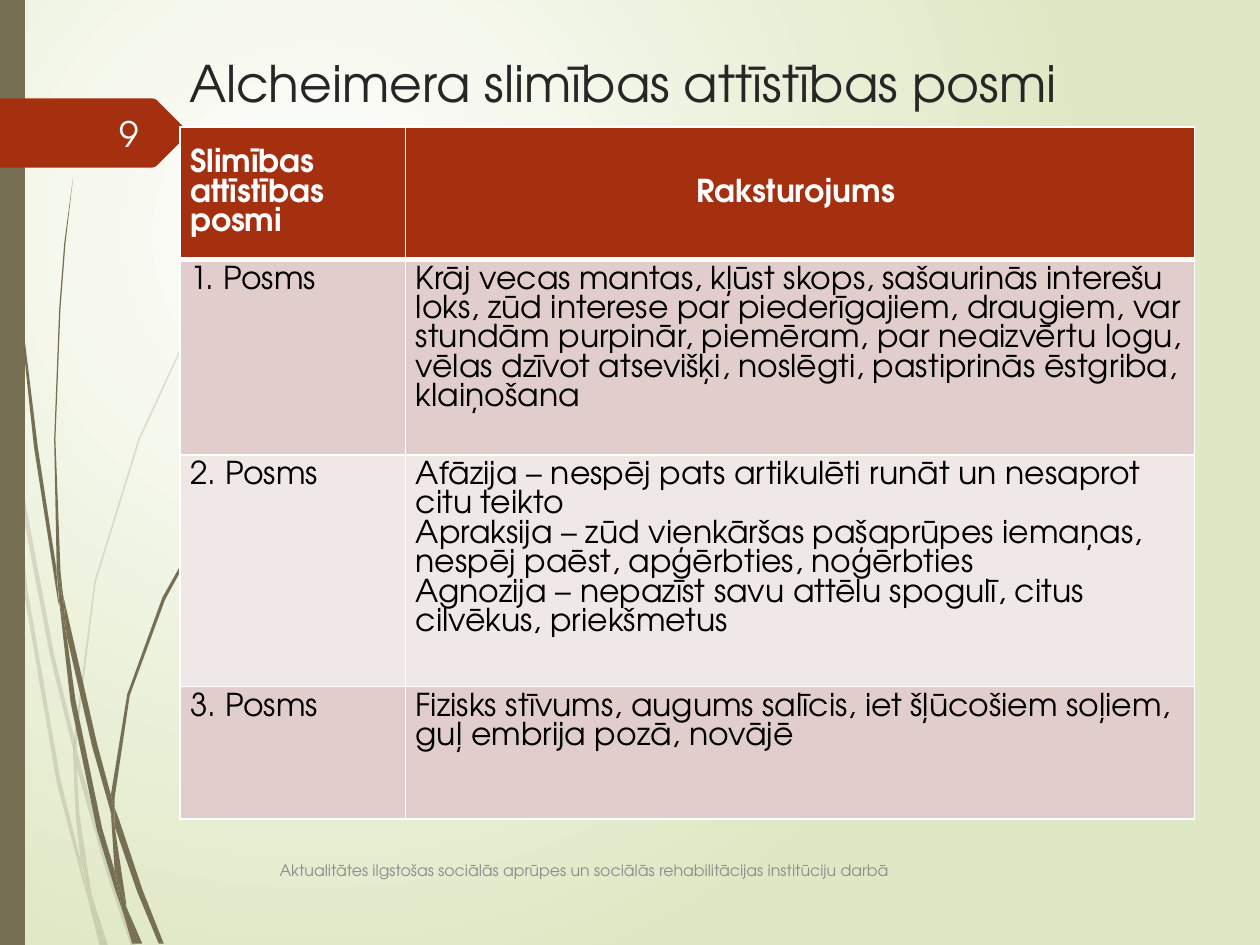
from dataclasses import dataclass

import pptx
import pptx.dml.color
import pptx.enum.text
import pptx.oxml
import pptx.util

PX = 9144  # EMU in one px, 100 px to the inch
NS = 'xmlns:a="http://schemas.openxmlformats.org/drawingml/2006/main"'
ALIGN = pptx.enum.text.PP_ALIGN
ANCHOR = pptx.enum.text.MSO_ANCHOR


@dataclass(frozen=True)
class Theme:
    font: str = "TeX Gyre Adventor"
    earth: str = "766F54"
    rust: str = "A53010"
    white: str = "FFFFFF"
    page: str = "FEFFFF"
    leaf: str = "DFE8C4"
    dark: str = "262626"
    black: str = "000000"
    grey: str = "8C8C8C"
    bands: tuple = ("E1CDCC", "F0E8E7")
    head: float = 28.8
    body: float = 18
    num: float = 20
    foot: float = 9
    pitch: float = 16.8


# Outlines of the grass, as x, y corners
PALE = [
    [(8, 350), (6, 322), (0, 282), (0, 299), (7, 344)],
    [(40, 522), (59, 599), (59, 586), (43, 520), (10, 345), (12, 376)],
    [(64, 607), (61, 596), (61, 610), (85, 694), (104, 751), (108, 751),
     (88, 692)],
    [(83, 751), (86, 751), (73, 711)],
    [(64, 683), (48, 619), (22, 469), (12, 376), (8, 350), (19, 470),
     (45, 621), (64, 693), (70, 714), (69, 707)],
    [(58, 599), (60, 646), (64, 683), (67, 692), (73, 711), (72, 706),
     (63, 646), (61, 610), (61, 608)],
    [(61, 584), (76, 462), (111, 349), (159, 245), (187, 198), (201, 175),
     (217, 154), (217, 153), (201, 175), (186, 197), (158, 244), (110, 348),
     (75, 461), (59, 584), (59, 586), (61, 596)],
    [(70, 714), (79, 751), (82, 751)],
    [(61, 608), (61, 610), (61, 596), (59, 586), (58, 599)],
    [(67, 692), (65, 683), (69, 707), (70, 714), (82, 751), (83, 751),
     (73, 711)],
]
DEEP = [
    [(5, 110), (14, 233), (27, 355), (46, 477), (47, 481), (45, 457),
     (45, 453), (30, 355), (15, 232), (6, 109), (4, 48), (3, 0), (2, 0),
     (3, 48)],
    [(73, 592), (88, 645), (88, 633), (88, 631), (77, 590), (50, 472),
     (53, 505)],
    [(94, 649), (91, 641), (91, 656), (109, 708), (126, 749), (130, 749),
     (113, 706)],
    [(91, 691), (81, 657), (60, 556), (53, 505), (47, 477), (56, 557),
     (77, 659), (92, 708), (97, 722), (96, 717)],
    [(50, 472), (48, 453), (44, 349), (48, 245), (52, 193), (58, 141),
     (51, 193), (47, 245), (43, 349), (45, 449), (49, 472)],
    [(110, 749), (113, 749), (100, 719)],
    [(47, 477), (53, 505), (50, 472), (49, 472), (45, 449), (45, 453)],
    [(91, 633), (103, 552), (131, 476), (169, 406), (191, 374), (203, 359),
     (216, 344), (215, 344), (203, 358), (191, 373), (168, 405), (129, 474),
     (101, 551), (88, 631), (91, 641)],
    [(97, 722), (105, 749), (108, 749)],
    [(88, 645), (91, 691), (96, 706), (100, 719), (100, 716), (91, 656),
     (90, 651)],
    [(88, 645), (90, 651), (91, 656), (91, 641), (88, 631), (88, 633)],
    [(96, 706), (91, 691), (96, 717), (97, 722), (108, 749), (110, 749),
     (100, 719)],
]
ARROW = [(0, 78), (121, 78), (124, 79), (149, 104), (150, 105), (149, 107),
         (124, 132), (121, 133), (0, 133)]
ROWS = [
    ("Slimības attīstības posmi", "Raksturojums "),
    ("1. Posms",
     "Krāj vecas mantas, kļūst skops, sašaurinās interešu loks, zūd interese "
     "par piederīgajiem, draugiem, var stundām purpinār, piemēram, par "
     "neaizvērtu logu, vēlas dzīvot atsevišķi, noslēgti, pastiprinās "
     "ēstgriba, klaiņošana"),
    ("2. Posms",
     "Afāzija – nespēj pats artikulēti runāt un nesaprot citu teikto\n"
     "Apraksija – zūd vienkāršas pašaprūpes iemaņas, nespēj paēst, "
     "apģērbties, noģērbties\n"
     "Agnozija – nepazīst savu attēlu spogulī, citus cilvēkus, priekšmetus"),
    ("3. Posms",
     "Fizisks stīvums, augums salīcis, iet šļūcošiem soļiem, guļ embrija "
     "pozā, novājē"),
]


def paint(fill, tone):
    fill.solid()
    fill.fore_color.rgb = pptx.dml.color.RGBColor.from_string(tone)


def write(frame, text, size, tone, font, bold=False, align=ALIGN.LEFT,
          pitch=None):
    frame.text = text
    for para in frame.paragraphs:
        para.alignment = align
        if pitch:
            para.line_spacing = pptx.util.Pt(pitch)
        for run in para.runs:
            run.font.name = font
            run.font.size = pptx.util.Pt(size)
            run.font.bold = bold
            run.font.color.rgb = pptx.dml.color.RGBColor.from_string(tone)


def edge(cell, tone, **sides):
    """Draw cell borders; sides maps L, R, T, B to a width in points."""
    props = cell._tc.get_or_add_tcPr()
    for at, (side, width) in enumerate(sides.items()):
        props.insert(at, pptx.oxml.parse_xml(
            f'<a:ln{side} {NS} w="{width * 12700}"><a:solidFill>'
            f'<a:srgbClr val="{tone}"/></a:solidFill></a:ln{side}>'))


class Deck:
    """Holds the theme and the current slide."""

    def __init__(self, theme):
        self.theme = theme
        self.file = pptx.Presentation()
        self.file.slide_width, self.file.slide_height = 1000 * PX, 750 * PX
        self.slide = self.file.slides.add_slide(self.file.slide_layouts[5])

    def glow(self):
        """Fill the background with a round gradient."""
        fill = self.slide.background.fill
        fill.gradient()
        for stop, tone in zip(fill.gradient_stops,
                              (self.theme.white, self.theme.leaf)):
            stop.color.rgb = pptx.dml.color.RGBColor.from_string(tone)
        grad = self.slide._element.xpath(".//p:bg//a:gradFill")[0]
        lin = grad.xpath("a:lin")[0]
        grad.replace(lin, pptx.oxml.parse_xml(
            f'<a:path {NS} path="circle"><a:fillToRect l="50000" t="50000" '
            'r="100000" b="100000"/></a:path>'))

    def shape(self, points, tone, alpha=100):
        pen = self.slide.shapes.build_freeform(*points[0], scale=PX)
        pen.add_line_segments(points[1:])
        form = pen.convert_to_shape()
        form.shadow.inherit = False
        form.line.fill.background()
        paint(form.fill, tone)
        if alpha < 100:
            form._element.xpath("./p:spPr/a:solidFill/a:srgbClr")[0].append(
                pptx.oxml.parse_xml(f'<a:alpha {NS} val="{alpha * 1000}"/>'))

    def title(self, box, text):
        item = self.slide.shapes.title
        item.left, item.top, item.width, item.height = (n * PX for n in box)
        item.text_frame.vertical_anchor = ANCHOR.TOP
        write(item.text_frame, text, self.theme.head, self.theme.dark,
              self.theme.font)

    def label(self, box, text, size, tone, **style):
        frame = self.slide.shapes.add_textbox(
            *(n * PX for n in box)).text_frame
        frame.word_wrap = True
        frame.vertical_anchor = ANCHOR.MIDDLE
        write(frame, text, size, tone, self.theme.font, **style)

    def table(self, left, top, cols, highs, rows):
        look = self.theme
        grid = self.slide.shapes.add_table(
            len(rows), len(cols), left * PX, top * PX,
            sum(cols) * PX, sum(highs) * PX).table
        for col, wide in zip(grid.columns, cols):
            col.width = wide * PX
        for r, (high, texts) in enumerate(zip(highs, rows)):
            grid.rows[r].height = high * PX
            head = r == 0
            for c, text in enumerate(texts):
                cell = grid.cell(r, c)
                cell.margin_left = cell.margin_right = 8 * PX
                cell.margin_top = cell.margin_bottom = 5 * PX
                cell.vertical_anchor = ANCHOR.MIDDLE if head else ANCHOR.TOP
                paint(cell.fill, look.rust if head else look.bands[(r - 1) % 2])
                write(cell.text_frame, text, look.body,
                      look.white if head else look.black, look.font,
                      bold=head, pitch=look.pitch,
                      align=ALIGN.CENTER if head and c else ALIGN.LEFT)
                edge(cell, look.white, L=1, R=1, T=3 if r == 1 else 1,
                     B=3 if head else 1)


def main():
    look = Theme()
    deck = Deck(look)
    deck.glow()
    for blade in PALE:
        deck.shape(blade, look.earth, alpha=20)
    for blade in DEEP:
        deck.shape(blade, look.earth)
    deck.shape([(0, 0), (20, 0), (20, 750), (0, 750)], look.earth)
    deck.shape(ARROW, look.rust)
    deck.title((140, 36, 772, 70), "Alcheimera slimības attīstības posmi")
    deck.table(143, 101, (179, 626), (105, 155, 184, 105), ROWS)
    deck.label((212, 671, 625, 40),
               "Aktualitātes ilgstošas sociālās aprūpes un sociālās "
               "rehabilitācijas institūciju darbā", look.foot, look.grey)
    deck.label((56, 86, 64, 40), "9", look.num, look.page, align=ALIGN.RIGHT)
    deck.file.save("out.pptx")


if __name__ == "__main__":
    main()
